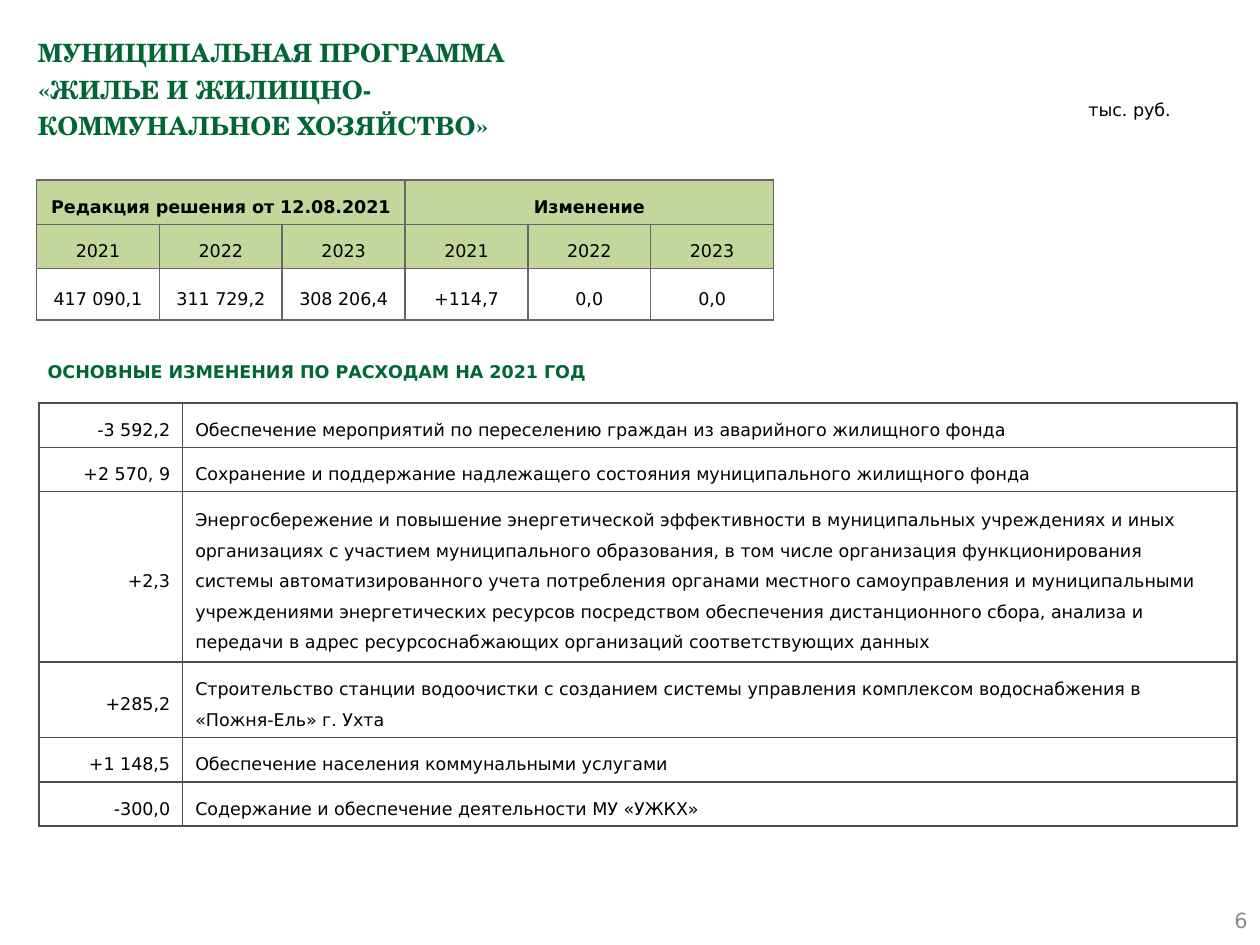
from dataclasses import dataclass

from lxml.etree import SubElement
from pptx import Presentation
from pptx.dml.color import RGBColor
from pptx.enum.shapes import MSO_SHAPE as Shape
from pptx.enum.text import MSO_ANCHOR as Anchor, MSO_AUTO_SIZE as AutoSize, PP_ALIGN as Align
from pptx.oxml.ns import qn
from pptx.util import Inches, Pt


@dataclass(frozen=True)
class Theme:
    title_font: str = "TeX Gyre Schola"
    body_font: str = "DejaVu Sans"
    title_size: float = 14.4
    body_size: float = 10
    number_size: float = 12
    green: str = "006633"
    black: str = "000000"
    gray: str = "8C8C8C"
    header_fill: str = "C3D69B"
    totals_border: str = "666666"
    changes_border: str = "4D4D4D"


class SlideBuilder:
    def __init__(self, slide, theme):
        self.slide = slide
        self.theme = theme

    def format_text(self, tf, text, size=None, color=None, bold=False, font=None,
                    align=Align.LEFT, spacing=1.0):
        tf.text = text
        for p in tf.paragraphs:
            p.alignment = align
            p.line_spacing = spacing
            for r in p.runs:
                r.font.name = font or self.theme.body_font
                r.font.size = Pt(size or self.theme.body_size)
                r.font.bold = bold
                r.font.color.rgb = RGBColor.from_string(color or self.theme.black)

    def title(self, text, left, top, width, height):
        sp = self.slide.shapes.title
        sp.left, sp.top, sp.width, sp.height = map(Inches, (left, top, width, height))
        tf = sp.text_frame
        tf.word_wrap = True
        tf.auto_size = AutoSize.NONE
        tf.vertical_anchor = Anchor.TOP
        self.format_text(tf, text, self.theme.title_size, self.theme.green, True,
                         self.theme.title_font, spacing=1.2)

    def text(self, text, left, top, width, height, anchor=Anchor.TOP, **style):
        sp = self.slide.shapes.add_textbox(*map(Inches, (left, top, width, height)))
        tf = sp.text_frame
        tf.word_wrap = True
        tf.vertical_anchor = anchor
        self.format_text(tf, text, **style)

    def heading(self, text, left, top, width, height):
        sp = self.slide.shapes.add_shape(
            Shape.PENTAGON, *map(Inches, (left, top, width, height)))
        sp.adjustments[0] = 0
        sp.shadow.inherit = False
        sp.fill.background()
        sp.line.fill.background()
        sp.text_frame.vertical_anchor = Anchor.MIDDLE
        self.format_text(sp.text_frame, text, color=self.theme.green, bold=True)

    def table(self, left, top, widths, heights):
        frame = self.slide.shapes.add_table(
            len(heights), len(widths),
            *map(Inches, (left, top, sum(widths), sum(heights))))
        table = frame.table
        table.first_row = table.horz_banding = False
        for column, width in zip(table.columns, widths):
            column.width = Inches(width)
        for row, height in zip(table.rows, heights):
            row.height = Inches(height)
        return table

    def cell(self, cell, text, border, fill=None, inset=0.1, **style):
        cell.margin_left = cell.margin_right = Inches(inset)
        cell.margin_top = cell.margin_bottom = Inches(0.05)
        cell.vertical_anchor = Anchor.MIDDLE
        self.format_text(cell.text_frame, text, spacing=1.5, **style)
        props = cell._tc.get_or_add_tcPr()
        for side in ("a:lnL", "a:lnR", "a:lnT", "a:lnB"):
            line = SubElement(props, qn(side), w=str(Pt(1)))
            solid = SubElement(line, qn("a:solidFill"))
            SubElement(solid, qn("a:srgbClr"), val=border)
        if fill:
            cell.fill.solid()
            cell.fill.fore_color.rgb = RGBColor.from_string(fill)
        else:
            cell.fill.background()

    def totals_table(self, left, top, groups, rows):
        theme = self.theme
        table = self.table(left, top, [0.975] * 6, [0.35, 0.35, 0.41])
        span = len(rows[0]) // len(groups)
        header = [text for group in groups for text in [group] + [""] * (span - 1)]
        for i, values in enumerate([header] + rows):
            for j, value in enumerate(values):
                self.cell(table.cell(i, j), value, theme.totals_border,
                          theme.header_fill if i < 2 else None, 0.05,
                          bold=i == 0, align=Align.CENTER)
        for j in range(0, len(header), span):
            table.cell(0, j).merge(table.cell(0, j + span - 1))

    def changes_table(self, left, top, changes):
        table = self.table(left, top, [1.14, 8.37], [0.35, 0.35, 1.35, 0.6, 0.35, 0.35])
        for i, change in enumerate(changes):
            for j, (value, align) in enumerate(zip(change, (Align.RIGHT, Align.LEFT))):
                self.cell(table.cell(i, j), value, self.theme.changes_border, align=align)


TOTALS = [
    ["2021", "2022", "2023"] * 2,
    ["417 090,1", "311 729,2", "308 206,4", "+114,7", "0,0", "0,0"],
]
CHANGES = [
    ("-3 592,2", "Обеспечение мероприятий по переселению граждан из аварийного жилищного фонда"),
    ("+2 570, 9", "Сохранение и поддержание надлежащего состояния муниципального жилищного фонда"),
    ("+2,3", "Энергосбережение и повышение энергетической эффективности в муниципальных "
             "учреждениях и иных организациях с участием муниципального образования, в том "
             "числе организация функционирования системы автоматизированного учета потребления "
             "органами местного самоуправления и муниципальными учреждениями энергетических "
             "ресурсов посредством обеспечения дистанционного сбора, анализа и передачи в адрес "
             "ресурсоснабжающих организаций соответствующих данных"),
    ("+285,2", "Строительство станции водоочистки с созданием системы управления комплексом "
               "водоснабжения в\n«Пожня-Ель» г. Ухта"),
    ("+1 148,5", "Обеспечение населения коммунальными услугами"),
    ("-300,0", "Содержание и обеспечение деятельности МУ «УЖКХ»"),
]


def main():
    prs = Presentation()
    prs.slide_width, prs.slide_height = Inches(10), Inches(7.5)
    theme = Theme()
    builder = SlideBuilder(prs.slides.add_slide(prs.slide_layouts[5]), theme)
    builder.title("МУНИЦИПАЛЬНАЯ ПРОГРАММА \v«ЖИЛЬЕ И ЖИЛИЩНО-\vКОММУНАЛЬНОЕ ХОЗЯЙСТВО»",
                  0.2, 0.2, 9.61, 0.79)
    builder.text("6", 7.67, 7.1, 2.33, 0.4, Anchor.MIDDLE, size=theme.number_size,
                 color=theme.gray, align=Align.RIGHT)
    builder.heading("ОСНОВНЫЕ ИЗМЕНЕНИЯ ПО РАСХОДАМ НА 2021 ГОД", 0.28, 2.73, 5.32, 0.43)
    builder.text("тыс. руб.", 8.54, 0.7, 1.01, 0.3, spacing=1.2)
    builder.totals_table(0.29, 1.43, ["Редакция решения от 12.08.2021", "Изменение"], TOTALS)
    builder.changes_table(0.31, 3.2, CHANGES)
    prs.save("out.pptx")


if __name__ == "__main__":
    main()
